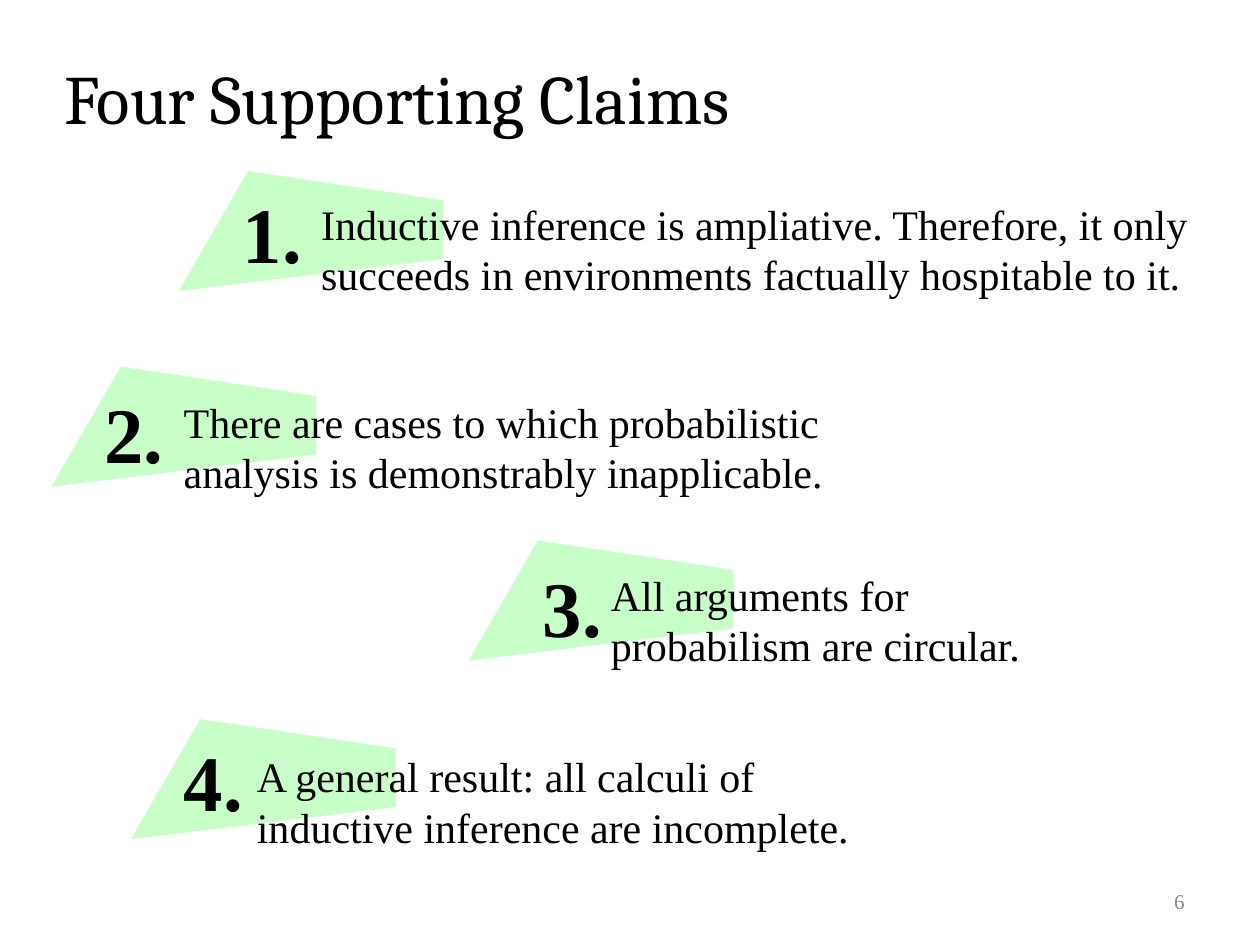
import pptx
import pptx.util
import pptx.dml.color
import pptx.enum.text
from dataclasses import dataclass

Inch = pptx.util.Inches
Text = pptx.enum.text
WIDE, HIGH = 10, 7.5


@dataclass
class Theme:
    ink: str = "000000"
    mute: str = "898989"
    mint: str = "C8FFC8"
    head: str = "Cambria"
    body: str = "Times New Roman"
    title: float = 39.6
    mark: float = 45
    claim: float = 24
    page: float = 12


class Deck:
    """Places elements by shares of the slide's size."""

    def __init__(self, theme):
        self.theme = theme
        self.show = pptx.Presentation()
        self.show.slide_width, self.show.slide_height = Inch(WIDE), Inch(HIGH)
        self.slide = self.show.slides.add_slide(self.show.slide_layouts[5])

    def rect(self, x, y, w, h):
        return Inch(x * WIDE), Inch(y * HIGH), Inch(w * WIDE), Inch(h * HIGH)

    def label(self, shape, text, size, font=None, color=None, bold=False,
              align=Text.PP_ALIGN.LEFT, **frame):
        body = shape.text_frame
        body.text = text
        for key, val in {"word_wrap": True, **frame}.items():
            setattr(body, key, val)
        para = body.paragraphs[0]
        para.alignment = align
        face = para.runs[0].font
        look = {"name": font or self.theme.body, "size": pptx.util.Pt(size), "bold": bold}
        for key, val in look.items():
            setattr(face, key, val)
        face.color.rgb = pptx.dml.color.RGBColor.from_string(color or self.theme.ink)

    def title(self, text, *box):
        shape = self.slide.shapes.title
        shape.left, shape.top, shape.width, shape.height = self.rect(*box)
        self.label(shape, text, self.theme.title, self.theme.head,
                   vertical_anchor=Text.MSO_ANCHOR.MIDDLE,
                   auto_size=Text.MSO_AUTO_SIZE.NONE)

    def text(self, text, box, size, **style):
        shape = self.slide.shapes.add_textbox(*self.rect(*box))
        self.label(shape, text, size, **style)

    def wedge(self, x, y):
        # Corner offsets from the wedge's top-left, as shares of the slide
        spots = [(0.055, 0), (0.21, 0.031), (0.21, 0.093), (0, 0.127)]
        spots = [(Inch((x + dx) * WIDE), Inch((y + dy) * HIGH)) for dx, dy in spots]
        pen = self.slide.shapes.build_freeform(*spots[0])
        pen.add_line_segments(spots[1:], close=True)
        shape = pen.convert_to_shape()
        shape.shadow.inherit = False
        shape.fill.solid()
        shape.fill.fore_color.rgb = pptx.dml.color.RGBColor.from_string(self.theme.mint)
        shape.line.fill.background()

    def claim(self, num, text, wedge, mark, body, wide):
        self.wedge(*wedge)
        grow = Text.MSO_AUTO_SIZE.SHAPE_TO_FIT_TEXT
        self.text(text, (*body, wide, 0.121), self.theme.claim, auto_size=grow)
        self.text(f"{num}.", (*mark, 0.068, 0.115), self.theme.mark, bold=True,
                  auto_size=grow, word_wrap=False)


# Claim text, then wedge, number and text corners, then text width
CLAIMS = [
    ("Inductive inference is ampliative. Therefore, it only succeeds in "
     "environments factually hospitable to it.",
     (0.142, 0.181), (0.183, 0.189), (0.245, 0.203), 0.71),
    ("There are cases to which probabilistic analysis is demonstrably inapplicable.",
     (0.041, 0.388), (0.073, 0.401), (0.136, 0.413), 0.596),
    ("All arguments for probabilism are circular.",
     (0.372, 0.572), (0.421, 0.585), (0.475, 0.596), 0.376),
    ("A general result: all calculi of inductive inference are incomplete.",
     (0.104, 0.761), (0.136, 0.769), (0.194, 0.788), 0.538),
]


def main():
    theme = Theme()
    deck = Deck(theme)
    # Heading
    deck.title("Four Supporting Claims", 0.041, 0.064, 0.625, 0.077)
    # Claims
    for num, claim in enumerate(CLAIMS, 1):
        deck.claim(num, *claim)
    # Page number
    deck.text("6", (0.717, 0.927, 0.233, 0.053), theme.page, color=theme.mute,
              align=Text.PP_ALIGN.RIGHT, vertical_anchor=Text.MSO_ANCHOR.MIDDLE)
    deck.show.save("out.pptx")


if __name__ == "__main__":
    main()
